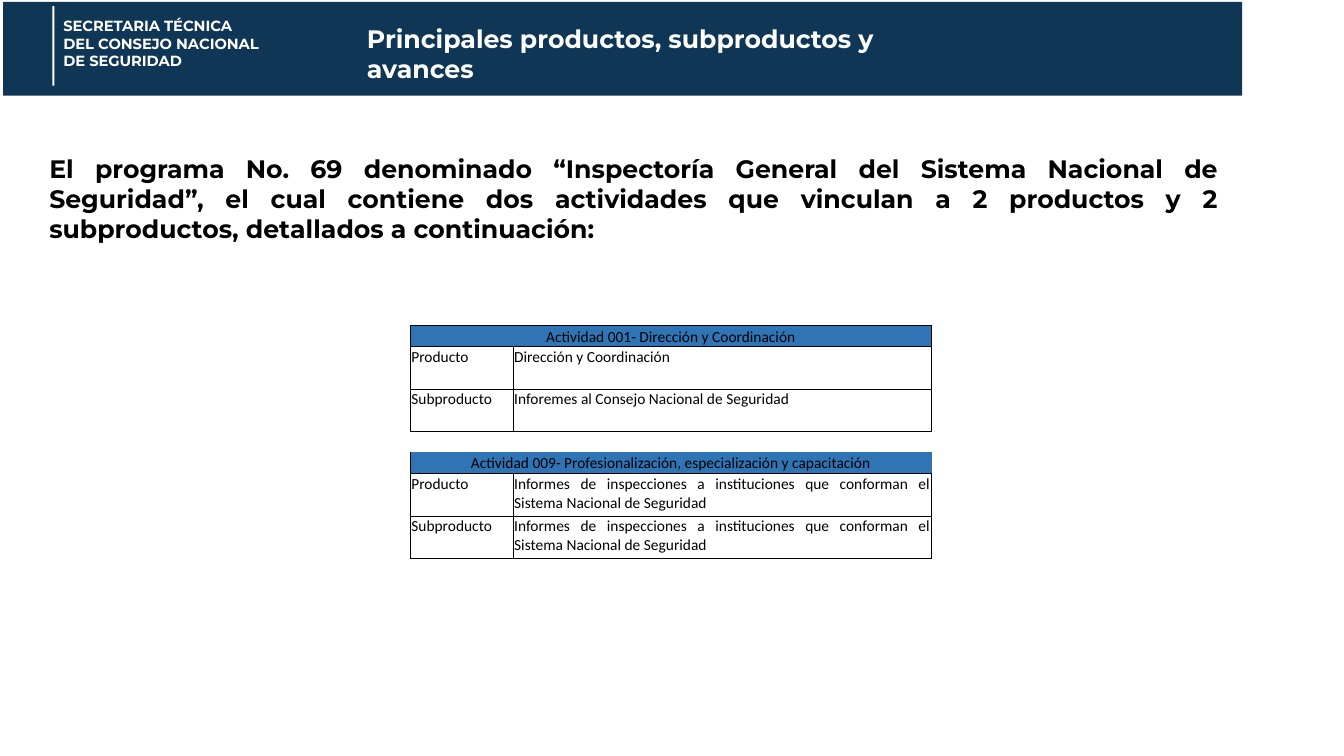
"""Build the slide on main products, subproducts and progress."""
from lxml import etree
from pptx import Presentation
from pptx.dml.color import RGBColor
from pptx.enum.shapes import MSO_SHAPE
from pptx.enum.text import MSO_ANCHOR, PP_ALIGN
from pptx.oxml.ns import qn
from pptx.util import Inches, Pt

RECTANGLE = MSO_SHAPE.RECTANGLE
LEFT, CENTER, JUSTIFY = PP_ALIGN.LEFT, PP_ALIGN.CENTER, PP_ALIGN.JUSTIFY
TOP, BOTTOM = MSO_ANCHOR.TOP, MSO_ANCHOR.BOTTOM

COLORS = {"navy": "0F3655", "blue": "2F75B5", "white": "FFFFFF", "black": "000000"}
HEADING_FONT, TABLE_FONT = "Montserrat", "Calibri"

OFFICE = ["SECRETARIA TÉCNICA", "DEL CONSEJO NACIONAL", "DE SEGURIDAD"]
TITLE = ["Principales productos, subproductos y avances"]
INTRO = ["El programa No. 69 denominado “Inspectoría General del Sistema Nacional de "
         "Seguridad”, el cual contiene dos actividades que vinculan a 2 productos y 2 "
         "subproductos, detallados a continuación: "]
REPORTS = "Informes de inspecciones a instituciones que conforman el Sistema Nacional de Seguridad "
ACTIVITIES = [
    ("Actividad 001- Dirección y Coordinación", BOTTOM, "LRTB", LEFT,
     [("Producto", "Dirección y Coordinación"),
      ("Subproducto", "Inforemes al Consejo Nacional de Seguridad")]),
    ("Actividad 009- Profesionalización, especialización y capacitación", TOP, "LB", JUSTIFY,
     [("Producto", REPORTS), ("Subproducto", REPORTS)]),
]

WIDTH, HEIGHT = 13.33, 7.5
BAND = (0.03, 0.02, 12.29, 0.93)
RULE = (0.52, 0.06, 0.02, 0.79)
TEXTS = [
    (OFFICE, (0.53, 0.12, 3.77, 0.63), 10.5, "white", LEFT),
    (TITLE, (3.54, 0.18, 6.08, 0.71), 18, "white", LEFT),
    (INTRO, (0.39, 1.47, 11.79, 1.01), 18, "black", JUSTIFY),
]
TABLE_LEFT, TABLE_TOP = 4.07, 3.23
LABEL_WIDTH, DETAIL_WIDTH, DETAIL_COLUMNS = 1.02, 0.83, 5
LINE_HEIGHT = 0.21
TABLE_SIZE = 11


def color(name):
    return RGBColor.from_string(COLORS[name])


def add_span(para, text, font, size, shade, bold=False):
    span = para.add_run()
    span.text = text
    span.font.name, span.font.size, span.font.bold = font, Pt(size), bold
    span.font.color.rgb = color(shade)


def add_block(page, place, shade):
    block = page.shapes.add_shape(RECTANGLE, *map(Inches, place))
    block.shadow.inherit = False
    block.fill.solid()
    block.fill.fore_color.rgb = color(shade)
    block.line.fill.background()


def add_text(page, lines, place, size, shade, align):
    frame = page.shapes.add_textbox(*map(Inches, place)).text_frame
    frame.word_wrap = True
    for number, line in enumerate(lines):
        para = frame.add_paragraph() if number else frame.paragraphs[0]
        para.alignment = align
        add_span(para, line, HEADING_FONT, size, shade, True)


def style_cell(cell, sides, shade=None):
    cell.margin_left = cell.margin_right = cell.margin_top = Inches(0.01)
    cell.margin_bottom = 0
    if shade:
        cell.fill.solid()
        cell.fill.fore_color.rgb = color(shade)
    else:
        cell.fill.background()
    properties = cell._tc.get_or_add_tcPr()
    for place, side in enumerate("LRTB"):
        border = etree.Element(qn(f"a:ln{side}"), w=str(Pt(0.5)))
        if side in sides:
            fill = etree.SubElement(border, qn("a:solidFill"))
            etree.SubElement(fill, qn("a:srgbClr"), val=COLORS["black"])
        else:
            etree.SubElement(border, qn("a:noFill"))
        properties.insert(place, border)
    ending = etree.SubElement(cell.text_frame.paragraphs[0]._p, qn("a:endParaRPr"))
    ending.set("sz", str(TABLE_SIZE * 100))


def write_cell(cell, text, align, anchor=TOP):
    cell.vertical_anchor = anchor
    para = cell.text_frame.paragraphs[0]
    para.alignment = align
    add_span(para, text, TABLE_FONT, TABLE_SIZE, "black")


def table_rows():
    rows = []
    for number, (heading, anchor, sides, align, details) in enumerate(ACTIVITIES):
        if number:
            rows.append((1, "T", None, []))
        rows.append((1, sides, "blue", [(0, heading, CENTER, anchor)]))
        for label, detail in details:
            rows.append((2, "LRTB", None, [(0, label, LEFT, TOP), (1, detail, align, TOP)]))
    return rows


def add_activities(page):
    rows = table_rows()
    widths = [LABEL_WIDTH] + [DETAIL_WIDTH] * DETAIL_COLUMNS
    height = LINE_HEIGHT * sum(row[0] for row in rows)
    table = page.shapes.add_table(len(rows), len(widths), Inches(TABLE_LEFT), Inches(TABLE_TOP),
                                  Inches(sum(widths)), Inches(height)).table
    table.first_row = table.horz_banding = False
    for column, width in zip(table.columns, widths):
        column.width = Inches(width)
    for index, (lines, sides, shade, entries) in enumerate(rows):
        table.rows[index].height = Inches(lines * LINE_HEIGHT)
        for column in range(len(widths)):
            style_cell(table.cell(index, column), sides, shade)
        if entries:
            table.cell(index, entries[-1][0]).merge(table.cell(index, DETAIL_COLUMNS))
        for column, text, align, anchor in entries:
            write_cell(table.cell(index, column), text, align, anchor)


def main():
    deck = Presentation()
    deck.slide_width, deck.slide_height = Inches(WIDTH), Inches(HEIGHT)
    page = deck.slides.add_slide(deck.slide_layouts[6])
    add_block(page, BAND, "navy")
    add_block(page, RULE, "white")
    for entry in TEXTS:
        add_text(page, *entry)
    add_activities(page)
    deck.save("out.pptx")


if __name__ == "__main__":
    main()
